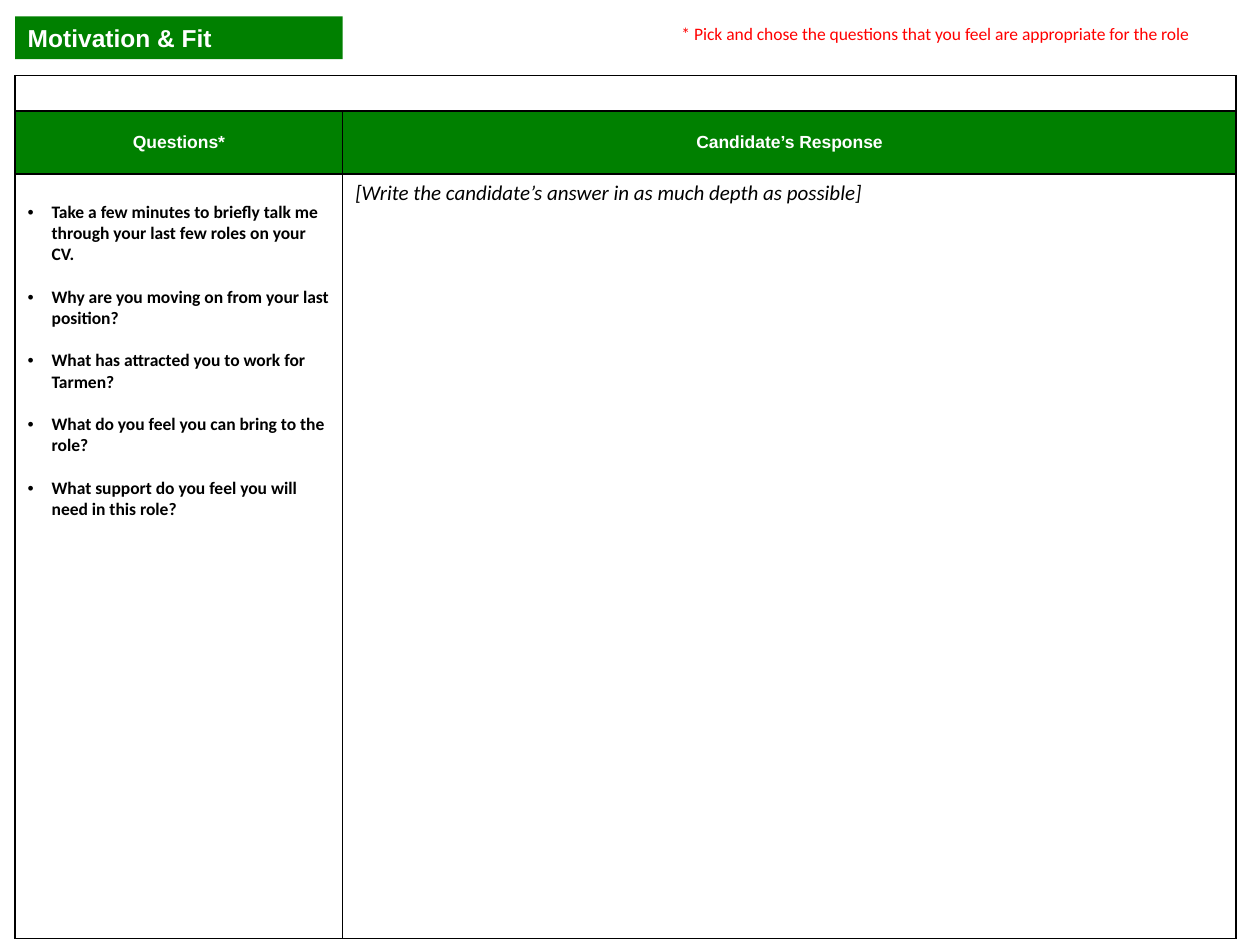
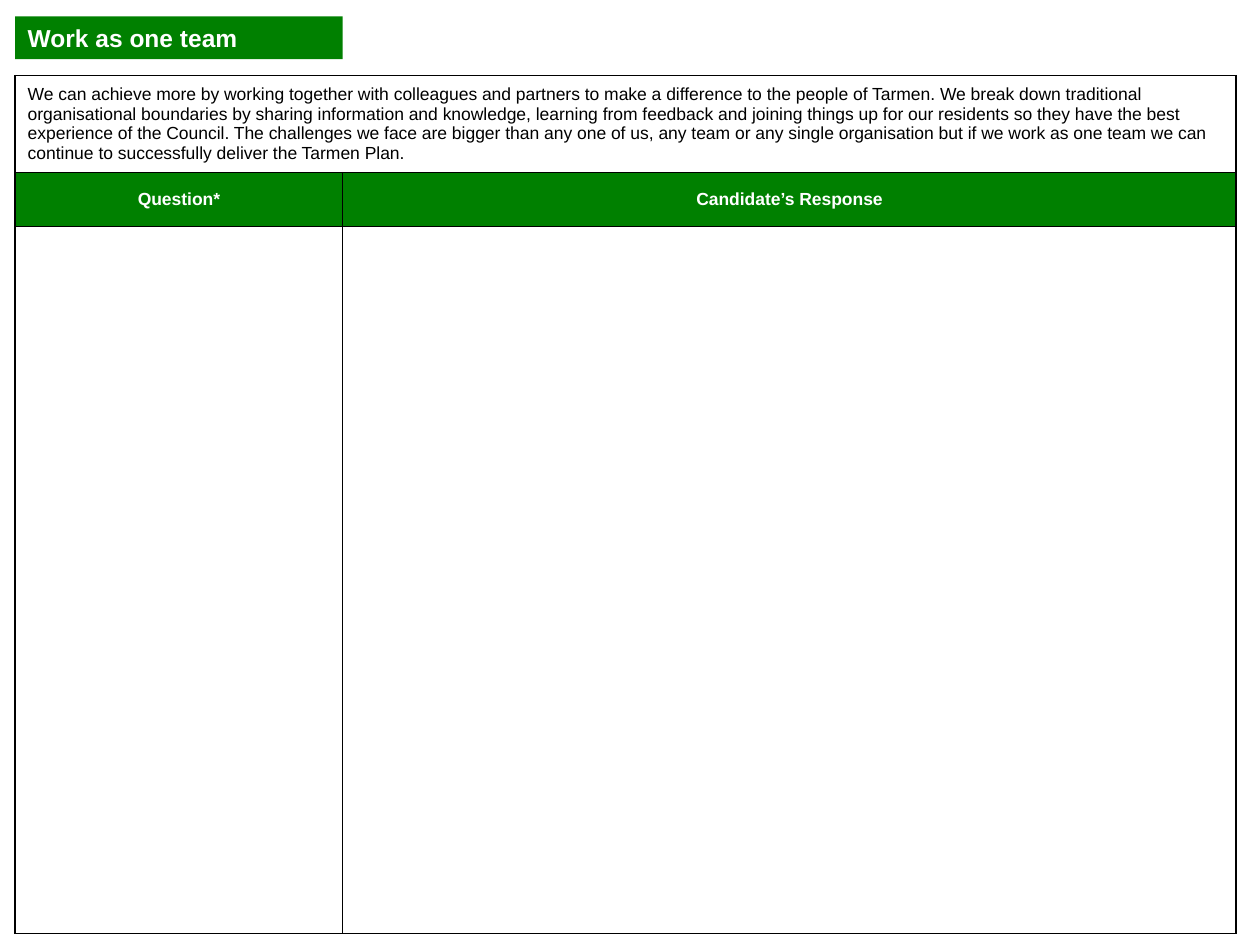
import dataclasses

import pptx
import pptx.dml.color
import pptx.enum.text
import pptx.oxml.ns
import pptx.util
from lxml import etree

Inches = pptx.util.Inches
Pt = pptx.util.Pt
qn = pptx.oxml.ns.qn
Align = pptx.enum.text.PP_ALIGN
Anchor = pptx.enum.text.MSO_ANCHOR


@dataclasses.dataclass(frozen=True)
class Theme:
    green: str = "008000"
    white: str = "FFFFFF"
    black: str = "000000"
    red: str = "FF0000"
    heading_font: str = "Arial"
    body_font: str = "Calibri"
    title_size: int = 14
    answer_size: int = 12
    text_size: int = 10
    border_width: int = 1


THEME = Theme()
LEFT, TOP = 0.12, 0.13
TABLE_TOP = 0.6
COLUMNS = (2.6, 7.09)
LINE_GAP = 12.2  # one line of body text, in points

QUESTIONS = (
    "Take a few minutes to briefly talk me through your last few roles on your CV.",
    "Why are you moving on from your last position?",
    "What has attracted you to work for Tarmen?",
    "What do you feel you can bring to the role?",
    "What support do you feel you will need in this role?",
)
TEAM_VALUE = (
    "We can achieve more by working together with colleagues and partners to make "
    "a difference to the people of Tarmen. We break down traditional organisational "
    "boundaries by sharing information and knowledge, learning from feedback and "
    "joining things up for our residents so they have the best experience of the "
    "Council. The challenges we face are bigger than any one of us, any team or any "
    "single organisation but if we work as one team we can continue to successfully "
    "deliver the Tarmen Plan."
)


def rgb(color):
    return pptx.dml.color.RGBColor.from_string(color)


def add_run(p, text, font=THEME.heading_font, size=THEME.text_size,
            color=THEME.black, bold=False, italic=False):
    r = p.add_run()
    r.text = text
    r.font.name = font
    r.font.size = Pt(size)
    r.font.color.rgb = rgb(color)
    r.font.bold = bold
    r.font.italic = italic


def add_titled_slide(prs, title):
    """Title-only slide with the title in a green band."""
    slide = prs.slides.add_slide(prs.slide_layouts[5])
    sp = slide.shapes.title
    sp.left, sp.top = Inches(LEFT), Inches(TOP)
    sp.width, sp.height = Inches(COLUMNS[0]), Inches(0.34)
    sp.fill.solid()
    sp.fill.fore_color.rgb = rgb(THEME.green)
    tf = sp.text_frame
    tf.word_wrap = True
    tf.auto_size = pptx.enum.text.MSO_AUTO_SIZE.NONE
    tf.vertical_anchor = Anchor.MIDDLE
    p = tf.paragraphs[0]
    p.alignment = Align.LEFT
    add_run(p, title, size=THEME.title_size, color=THEME.white, bold=True)
    return slide


def add_note(slide, text):
    sp = slide.shapes.add_textbox(Inches(5.31), Inches(TOP), Inches(4.49), Inches(0.27))
    tf = sp.text_frame
    tf.word_wrap = True
    add_run(tf.paragraphs[0], text, font=THEME.body_font, color=THEME.red)


def set_borders(cell):
    tc_pr = cell._tc.get_or_add_tcPr()
    for i, side in enumerate(("lnL", "lnR", "lnT", "lnB")):
        ln = etree.Element(qn(f"a:{side}"), w=str(Pt(THEME.border_width)))
        fill = etree.SubElement(ln, qn("a:solidFill"))
        etree.SubElement(fill, qn("a:srgbClr"), val=THEME.black)
        tc_pr.insert(i, ln)


def set_empty_size(cell):
    """Keep an empty cell from growing to the default type size."""
    p = cell.text_frame.paragraphs[0]._p
    etree.SubElement(p, qn("a:endParaRPr"), sz=str(THEME.text_size * 100))


def add_interview_table(slide, row_heights, question_heading):
    """Full-width top row, green headings and a tall answer row."""
    frame = slide.shapes.add_table(
        len(row_heights), len(COLUMNS), Inches(LEFT), Inches(TABLE_TOP),
        Inches(sum(COLUMNS)), Inches(sum(row_heights)))
    table = frame.table
    table.first_row = table.horz_banding = False
    for column, width in zip(table.columns, COLUMNS):
        column.width = Inches(width)
    for row, height in zip(table.rows, row_heights):
        row.height = Inches(height)
    for cell in table.iter_cells():
        set_borders(cell)
        cell.fill.background()
    table.cell(0, 0).merge(table.cell(0, 1))

    # Headings
    for col, heading in enumerate((question_heading, "Candidate’s Response")):
        cell = table.cell(1, col)
        cell.fill.solid()
        cell.fill.fore_color.rgb = rgb(THEME.green)
        cell.vertical_anchor = Anchor.MIDDLE
        p = cell.text_frame.paragraphs[0]
        p.alignment = Align.CENTER
        add_run(p, heading, color=THEME.white, bold=True)
    return table


def set_bullet(p, indent=0.19):
    p_pr = p._p.get_or_add_pPr()
    p_pr.set("marL", str(Inches(indent)))
    p_pr.set("indent", str(-Inches(indent)))
    etree.SubElement(p_pr, qn("a:buFont"), typeface=THEME.heading_font)
    etree.SubElement(p_pr, qn("a:buChar"), char="•")


def fill_questions(cell, questions):
    cell.margin_top = Inches(0.22)
    tf = cell.text_frame
    for i, question in enumerate(questions):
        p = tf.add_paragraph() if i else tf.paragraphs[0]
        if i:
            p.space_before = Pt(LINE_GAP)
        set_bullet(p)
        add_run(p, question, font=THEME.body_font, bold=True)


def add_motivation_slide(prs):
    slide = add_titled_slide(prs, "Motivation & Fit")
    table = add_interview_table(slide, (0.28, 0.5, 6.07), "Questions*")
    set_empty_size(table.cell(0, 0))
    set_empty_size(table.cell(0, 1))
    fill_questions(table.cell(2, 0), QUESTIONS)
    add_run(table.cell(2, 1).text_frame.paragraphs[0],
            "[Write the candidate’s answer in as much depth as possible]",
            font=THEME.body_font, size=THEME.answer_size, italic=True)
    add_note(slide, "* Pick and chose the questions that you feel are appropriate for the role")


def add_team_slide(prs):
    slide = add_titled_slide(prs, "Work as one team")
    table = add_interview_table(slide, (0.77, 0.43, 5.61), "Question*")
    value_cell = table.cell(0, 0)
    value_cell.vertical_anchor = Anchor.MIDDLE
    add_run(value_cell.text_frame.paragraphs[0], TEAM_VALUE)


def main():
    prs = pptx.Presentation()
    prs.slide_width, prs.slide_height = Inches(10), Inches(7.5)
    add_motivation_slide(prs)
    add_team_slide(prs)
    prs.save("out.pptx")


if __name__ == "__main__":
    main()
